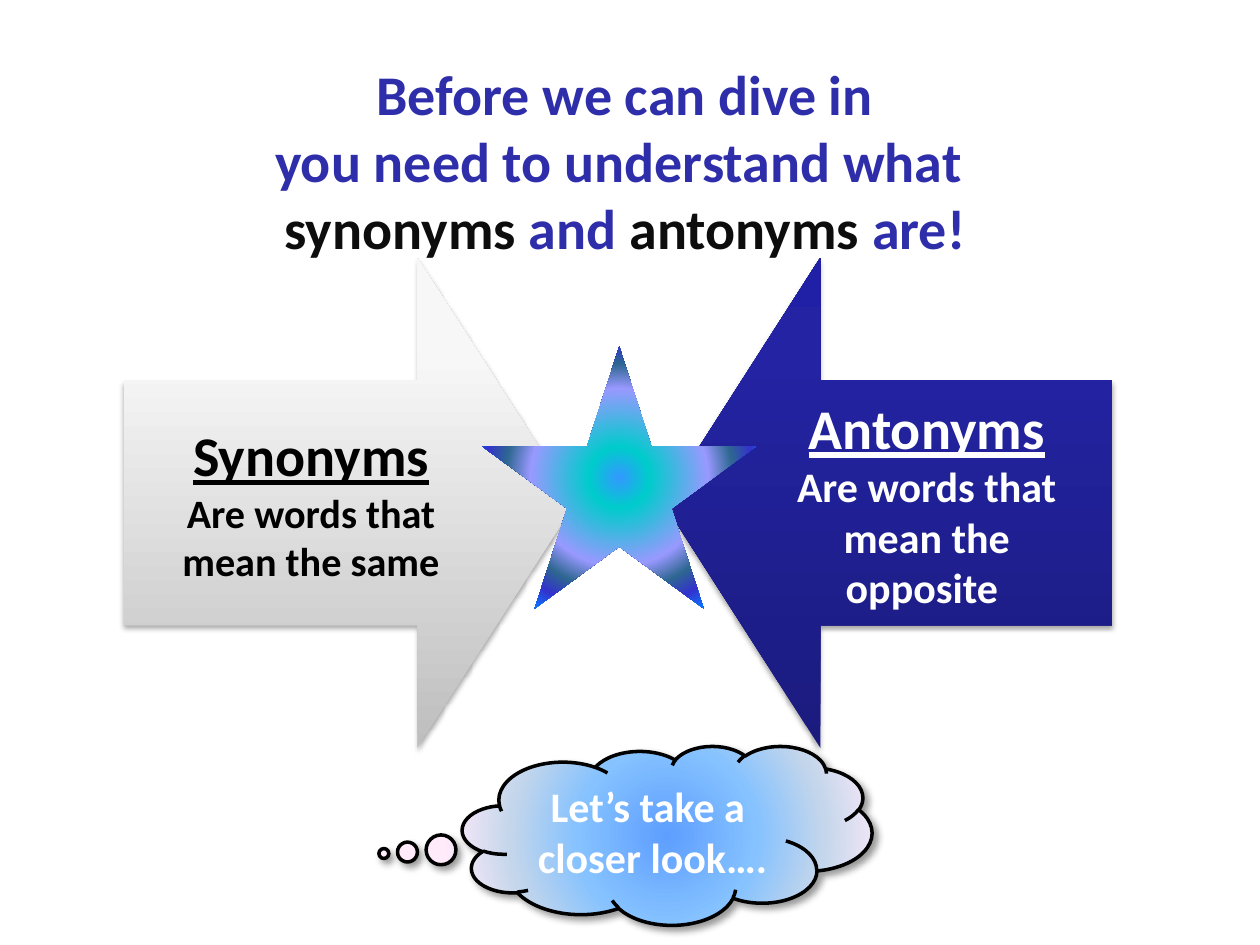
import pptx
import pptx.util
import pptx.oxml
import pptx.oxml.ns
import pptx.dml.color
import pptx.enum.shapes
import pptx.enum.text

THEME = {
    "font": "Calibri", "heading": 32, "body": 24, "body_small": 23,
    "blue": "2E2EAA", "ink": "0D0D0D", "black": "000000", "white": "FFFFFF",
    "silver": [(0, "BEBEBE"), (80, "F7F7F7"), (100, "F8F8F8")],
    "navy": [(0, "1B1B7E"), (80, "2323A3"), (100, "2020A6")],
    "sky": [(0, "5E9EFF"), (40, "85C2FF"), (70, "C4D6EB"), (100, "FFEBFA")],
    "star": [(0, "3399FF"), (16, "00CCCC"), (47, "9999FF"), (60, "2E6792"),
             (71, "3333CC"), (81, "1170FF"), (100, "006699")],
}
LINEAR = '<a:lin ang="16200000" scaled="0"/>'
RADIAL = '<a:path path="circle"><a:fillToRect l="50000" t="50000" r="50000" b="50000"/></a:path>'
SHAPE = pptx.enum.shapes.MSO_SHAPE
ALIGN = pptx.enum.text.PP_ALIGN
ANCHOR = pptx.enum.text.MSO_ANCHOR
Pt = pptx.util.Pt

prs = pptx.Presentation()
prs.slide_width, prs.slide_height = pptx.util.Inches(10), pptx.util.Inches(7.5)
s = prs.slides.add_slide(prs.slide_layouts[5])


def box(cx, cy, w, h):
    """Left, top, width, height from a centre and size in percent of the slide."""
    x_unit, y_unit = prs.slide_width / 100, prs.slide_height / 100
    return [round(v) for v in ((cx - w / 2) * x_unit, (cy - h / 2) * y_unit,
                               w * x_unit, h * y_unit)]


def paint(sp, stops, direction, shadow=None):
    """Gradient fill, no outline, optional (opacity, blur, distance, angle) shadow."""
    ns = pptx.oxml.ns.nsdecls("a")
    sp.line.fill.background()
    sp.fill.solid()
    marks = "".join(f'<a:gs pos="{pos * 1000}"><a:srgbClr val="{color}"/></a:gs>'
                    for pos, color in stops)
    spPr = sp._element.spPr
    spPr.replace(spPr.find(pptx.oxml.ns.qn("a:solidFill")), pptx.oxml.parse_xml(
        f'<a:gradFill {ns} rotWithShape="0"><a:gsLst>{marks}</a:gsLst>{direction}</a:gradFill>'))
    sp.shadow.inherit = False
    if shadow:
        alpha, blur, dist, angle = shadow
        spPr.find(pptx.oxml.ns.qn("a:effectLst")).append(pptx.oxml.parse_xml(
            f'<a:outerShdw {ns} blurRad="{Pt(blur)}" dist="{Pt(dist)}" dir="{angle * 60000}" '
            f'algn="ctr" rotWithShape="0"><a:srgbClr val="000000">'
            f'<a:alpha val="{alpha * 1000}"/></a:srgbClr></a:outerShdw>'))


texts = []  # (text frame, lines of (text, size, colour, underline) runs)

# Title
title = s.shapes.title
title.left, title.top, title.width, title.height = box(49.6, 17.07, 65.8, 22.93)
title.text_frame.vertical_anchor = ANCHOR.TOP
title.text_frame.auto_size = pptx.enum.text.MSO_AUTO_SIZE.NONE
size, blue, ink = THEME["heading"], THEME["blue"], THEME["ink"]
texts.append((title.text_frame, [
    [("Before we can dive in", size, blue, False)],
    [("you need to understand what ", size, blue, False)],
    [("synonyms", size, ink, False), (" and ", size, blue, False),
     ("antonyms", size, ink, False), (" are!", size, blue, False)],
]))

# Two facing arrows with their definitions
group = s.shapes.add_group_shape()
arrows = [
    (70.45, 35.6, 270, "navy", 73.55, 29.3, "Antonyms",
     "Are words that mean the opposite ", "body", "white"),
    (27.75, 35.8, 90, "silver", 24.7, 29.6, "Synonyms",
     "Are words that mean the same", "body_small", "black"),
]
for cx, length, turn, fill, text_cx, text_w, word, meaning, body, color in arrows:
    arrow = group.shapes.add_shape(
        SHAPE.UP_ARROW, *box(cx, 53.2, 38.9, length * prs.slide_width / prs.slide_height))
    arrow.rotation = turn
    arrow.adjustments[0], arrow.adjustments[1] = 0.5, 0.35
    paint(arrow, THEME[fill], LINEAR, (35, 3.1, 1.8, 90))
    tf = group.shapes.add_textbox(*box(text_cx, 53.2, text_w, 25.87)).text_frame
    tf.margin_left = tf.margin_right = tf.margin_top = tf.margin_bottom = pptx.util.Inches(0.25)
    tf.vertical_anchor = ANCHOR.MIDDLE
    texts.append((tf, [[(word, THEME["heading"], THEME[color], True)],
                       [(meaning, THEME[body], THEME[color], False)]]))

# Thought cloud
cloud = s.shapes.add_shape(SHAPE.CLOUD_CALLOUT, *box(52.95, 88.4, 32.5, 18.93))
cloud.adjustments[0], cloud.adjustments[1] = -0.692, 0.102
paint(cloud, THEME["sky"], RADIAL, (40, 4, 3, 45))
cloud.line.color.rgb = pptx.dml.color.RGBColor.from_string(THEME["black"])
cloud.line.width = Pt(2)
cloud.text_frame.vertical_anchor = ANCHOR.MIDDLE
texts.append((cloud.text_frame, [[(line, THEME["body"], THEME["white"], False)]
                                 for line in ("Let’s take a ", "closer look….")]))

# Star between the arrows
star = s.shapes.add_shape(SHAPE.STAR_5_POINT, *box(49.15, 50.53, 21.7, 27.73))
paint(star, THEME["star"], RADIAL)

# Wording
for tf, lines in texts:
    tf.word_wrap = True
    for i, runs in enumerate(lines):
        p = tf.add_paragraph() if i else tf.paragraphs[0]
        p.alignment = ALIGN.CENTER
        for text, size, color, underline in runs:
            r = p.add_run()
            r.text = text
            r.font.name, r.font.size = THEME["font"], Pt(size)
            r.font.bold, r.font.underline = True, underline
            r.font.color.rgb = pptx.dml.color.RGBColor.from_string(color)

prs.save("out.pptx")
